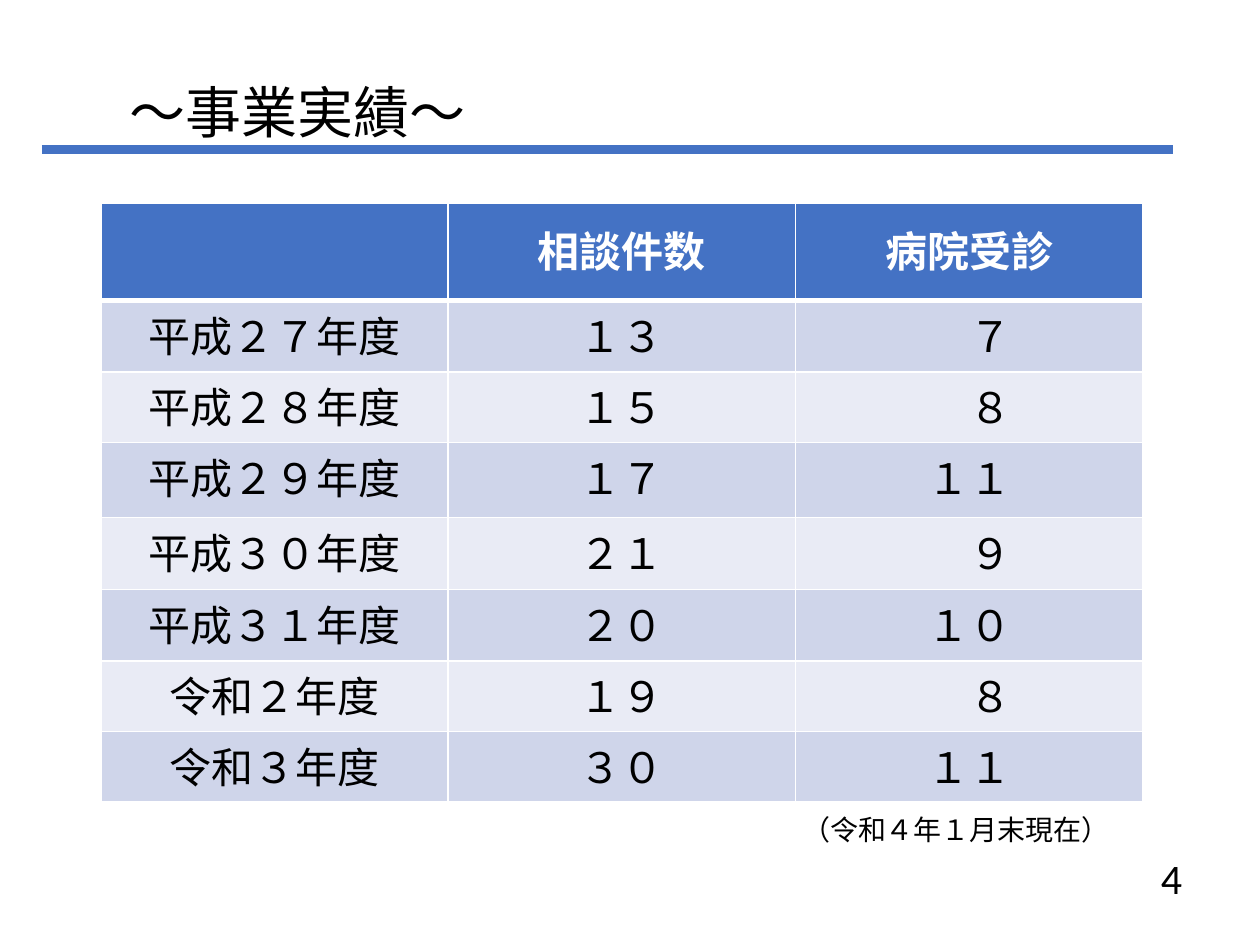
import pptx
import pptx.util
import pptx.dml.color
import pptx.enum.shapes
import pptx.enum.text
import pptx.oxml.ns
from lxml import etree

Pt = pptx.util.Pt
RGBColor = pptx.dml.color.RGBColor
ALIGN = pptx.enum.text.PP_ALIGN
ANCHOR = pptx.enum.text.MSO_ANCHOR
qn = pptx.oxml.ns.qn

BLUE = RGBColor(0x44, 0x72, 0xC4)
BAND_DARK = RGBColor(0xCF, 0xD5, 0xEA)
BAND_LIGHT = RGBColor(0xE9, 0xEB, 0xF5)
WHITE = RGBColor(0xFF, 0xFF, 0xFF)
BLACK = RGBColor(0, 0, 0)
JAPANESE = "Noto Sans CJK JP"
LATIN = "Calibri"

RESULTS = [
    ("", "相談件数", "病院受診"),
    ("平成２７年度", "１３", "　７"),
    ("平成２８年度", "１５", "　８"),
    ("平成２９年度", "１７", "１１"),
    ("平成３０年度", "２１", "　９"),
    ("平成３１年度", "２０", "１０"),
    ("令和２年度", "１９", "　８"),
    ("令和３年度", "３０", "１１"),
]
ROW_HEIGHTS = [55.4, 41, 40, 43, 41, 41, 40, 40]
TABLE_LEFT, TABLE_TOP, COLUMN_WIDTH = 57.6, 116.2, 198.5

LABELS = [
    ("～事業実績～", (67, 29.5, 214.6, 56.2), ANCHOR.MIDDLE,
     {"alignment": ALIGN.LEFT, "line_spacing": Pt(50)},
     {"size": Pt(32), "name": JAPANESE}),
    ("4", (640.8, 487.4, 41.8, 28.8), ANCHOR.MIDDLE,
     {"alignment": ALIGN.RIGHT}, {"size": Pt(24), "name": LATIN}),
    ("（令和４年１月末現在）", (451.4, 460.8, 201.6, 26.6), ANCHOR.TOP,
     {"alignment": ALIGN.LEFT}, {"size": Pt(16), "name": JAPANESE}),
]


def apply(target, values):
    for key, value in values.items():
        setattr(target, key, value)


def write(frame, text, paragraph_format, font_format, color):
    paragraph = frame.paragraphs[0]
    apply(paragraph, paragraph_format)
    if text:
        run = paragraph.add_run()
        run.text = text
        apply(run.font, font_format)
        run.font.color.rgb = color
        east_asian = etree.SubElement(run.font._element, qn("a:ea"))
        east_asian.set("typeface", JAPANESE)


def add_borders(cell, bottom_width):
    properties = cell._tc.get_or_add_tcPr()
    widths = {"a:lnL": 1, "a:lnR": 1, "a:lnT": 1, "a:lnB": bottom_width}
    for position, (side, width) in enumerate(widths.items()):
        border = etree.Element(qn(side), w=str(Pt(width)))
        fill = etree.SubElement(border, qn("a:solidFill"))
        etree.SubElement(fill, qn("a:srgbClr"), val=str(WHITE))
        properties.insert(position, border)


def add_results(slide):
    table = slide.shapes.add_table(
        len(RESULTS), len(RESULTS[0]), Pt(TABLE_LEFT), Pt(TABLE_TOP),
        Pt(COLUMN_WIDTH * len(RESULTS[0])), Pt(sum(ROW_HEIGHTS))).table
    for column in table.columns:
        column.width = Pt(COLUMN_WIDTH)
    for row, (height, values) in enumerate(zip(ROW_HEIGHTS, RESULTS)):
        table.rows[row].height = Pt(height)
        header = row == 0
        band = BLUE if header else BAND_DARK if row % 2 else BAND_LIGHT
        spacing = Pt(40 if header else 33)
        for column, value in enumerate(values):
            cell = table.cell(row, column)
            cell.fill.solid()
            cell.fill.fore_color.rgb = band
            add_borders(cell, 3 if header else 1)
            font = JAPANESE if column == 0 else LATIN
            write(cell.text_frame, value,
                  {"alignment": ALIGN.CENTER, "line_spacing": spacing},
                  {"size": Pt(24), "name": font, "bold": header},
                  WHITE if header else BLACK)


def add_rule(slide):
    rule = slide.shapes.add_connector(
        pptx.enum.shapes.MSO_CONNECTOR.STRAIGHT,
        Pt(24), Pt(85.5), Pt(670.3), Pt(85.5))
    rule.line.color.rgb = BLUE
    rule.line.width = Pt(5.25)
    etree.SubElement(rule._element.spPr, qn("a:effectLst"))


def main():
    deck = pptx.Presentation()
    apply(deck, {"slide_width": Pt(720), "slide_height": Pt(540)})
    slide = deck.slides.add_slide(deck.slide_layouts[6])
    add_rule(slide)
    add_results(slide)
    for text, box, anchor, paragraph_format, font_format in LABELS:
        frame = slide.shapes.add_textbox(*map(Pt, box)).text_frame
        apply(frame, {"word_wrap": True, "vertical_anchor": anchor})
        write(frame, text, paragraph_format, font_format, BLACK)
    deck.save("out.pptx")


if __name__ == "__main__":
    main()
